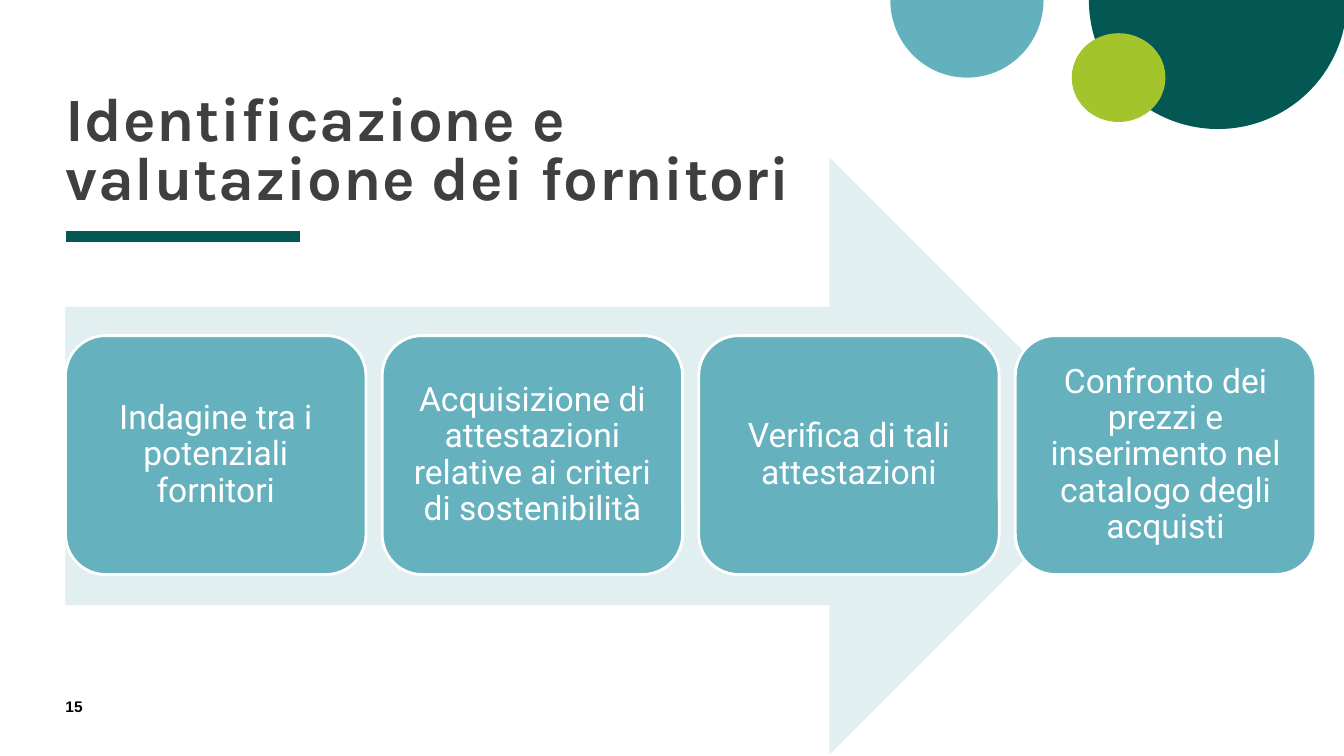
"""Build the slide on identifying and assessing suppliers."""
from dataclasses import dataclass

import lxml.etree
import pptx
import pptx.dml.color
import pptx.enum.shapes
import pptx.enum.text
import pptx.oxml.ns
import pptx.shapes.autoshape
import pptx.slide
import pptx.util

Inches = pptx.util.Inches
Pt = pptx.util.Pt
RGBColor = pptx.dml.color.RGBColor
ShapeType = pptx.enum.shapes.MSO_SHAPE
Align = pptx.enum.text.PP_ALIGN
Anchor = pptx.enum.text.MSO_ANCHOR

DARK_GREEN = RGBColor(0x03, 0x58, 0x54)
CIRCLE_BLUE = RGBColor(0x64, 0xB1, 0xBE)
LIME = RGBColor(0xA3, 0xC4, 0x2A)
STEP_BLUE = RGBColor(0x65, 0xB1, 0xBE)
ARROW_TINT = RGBColor(0xE1, 0xEF, 0xF1)
TITLE_GREY = RGBColor(0x3F, 0x3F, 0x3F)
BLACK = RGBColor(0, 0, 0)
WHITE = RGBColor(0xFF, 0xFF, 0xFF)

LEFT_MARGIN = 0.65
STEP_PITCH = 3.14
STEPS = (
    "Indagine tra i potenziali fornitori",
    "Acquisizione di attestazioni relative ai criteri di sostenibilità",
    "Verifica di tali attestazioni",
    "Confronto dei prezzi e inserimento nel catalogo degli acquisti",
)


@dataclass(frozen=True)
class Figure:
    kind: ShapeType
    left: float
    top: float
    width: float
    height: float
    fill: RGBColor
    adjustments: tuple[float, ...] = ()


DECORATION_BACK = Figure(ShapeType.PIE, 10.8, -1.28, 2.56, 2.56, DARK_GREEN, (0, 108))
DECORATION_FRONT = (
    Figure(ShapeType.PIE, 8.83, -0.77, 1.52, 1.54, CIRCLE_BLUE, (0, 108)),
    Figure(ShapeType.OVAL, 10.63, 0.33, 0.93, 0.88, LIME),
)
ARROW = Figure(ShapeType.RIGHT_ARROW, LEFT_MARGIN, 1.56, 10.54, 5.93, ARROW_TINT, (0.5, 0.5))


def add_figure(slide: pptx.slide.Slide, figure: Figure) -> pptx.shapes.autoshape.Shape:
    """Draw a filled preset shape without outline or shadow."""
    shape = slide.shapes.add_shape(
        figure.kind, Inches(figure.left), Inches(figure.top),
        Inches(figure.width), Inches(figure.height),
    )
    for index, value in enumerate(figure.adjustments):
        shape.adjustments[index] = value
    shape.shadow.inherit = False
    shape.fill.solid()
    shape.fill.fore_color.rgb = figure.fill
    shape.line.fill.background()
    return shape


def write_text(
    shape: pptx.shapes.autoshape.Shape, text: str, *, font: str, size: float,
    color: RGBColor, bold: bool = False, align: Align = Align.LEFT,
    anchor: Anchor = Anchor.TOP, line_spacing: float = 1.0,
    inset: float = 0, tracking: int = 0,
) -> None:
    """Fill a shape with one formatted paragraph."""
    frame = shape.text_frame
    frame.word_wrap = True
    frame.auto_size = pptx.enum.text.MSO_AUTO_SIZE.NONE
    frame.vertical_anchor = anchor
    frame.margin_left = frame.margin_right = Inches(inset)
    frame.margin_top = frame.margin_bottom = Inches(inset)
    paragraph = frame.paragraphs[0]
    paragraph.alignment = align
    paragraph.line_spacing = line_spacing
    run = paragraph.add_run()
    run.text = text
    run.font.name = font
    run.font.size = Pt(size)
    run.font.bold = bold
    run.font.color.rgb = color
    if tracking:
        run._r.get_or_add_rPr().set("spc", str(tracking))


def add_rule(slide: pptx.slide.Slide) -> None:
    """Draw the thick rule under the title."""
    rule = slide.shapes.add_connector(
        pptx.enum.shapes.MSO_CONNECTOR.STRAIGHT,
        Inches(LEFT_MARGIN), Inches(2.35), Inches(2.98), Inches(2.35),
    )
    rule.line.color.rgb = DARK_GREEN
    rule.line.width = Pt(8)
    lxml.etree.SubElement(rule._element.spPr, pptx.oxml.ns.qn("a:effectLst"))


def add_title(slide: pptx.slide.Slide) -> None:
    """Place and format the title placeholder."""
    title = slide.shapes.title
    title.left, title.top = Inches(LEFT_MARGIN), Inches(0.37)
    title.width, title.height = Inches(7.42), Inches(1.74)
    write_text(
        title, "Identificazione e valutazione dei fornitori", font="Karla", size=44,
        color=TITLE_GREY, bold=True, anchor=Anchor.BOTTOM, line_spacing=0.8, tracking=50,
    )


def add_step(slide: pptx.slide.Slide, index: int, text: str) -> None:
    """Draw one step of the process on the arrow."""
    left = LEFT_MARGIN + index * STEP_PITCH
    step = add_figure(
        slide,
        Figure(ShapeType.ROUNDED_RECTANGLE, left, 3.33, 2.98, 2.37, STEP_BLUE, (0.167,)),
    )
    step.line.color.rgb = WHITE
    step.line.width = Pt(2)
    write_text(
        step, text, font="Roboto", size=24, color=WHITE, align=Align.CENTER,
        anchor=Anchor.MIDDLE, line_spacing=0.9, inset=0.11,
    )


def main() -> None:
    """Assemble and save the presentation."""
    presentation = pptx.Presentation()
    presentation.slide_width = Inches(13.33)
    presentation.slide_height = Inches(7.5)
    slide = presentation.slides.add_slide(presentation.slide_layouts.get_by_name("Title Only"))
    add_figure(slide, DECORATION_BACK)
    add_rule(slide)
    for figure in DECORATION_FRONT:
        add_figure(slide, figure)
    add_title(slide)
    page_number = slide.shapes.add_textbox(
        Inches(LEFT_MARGIN), Inches(6.92), Inches(0.57), Inches(0.27)
    )
    write_text(page_number, "15", font="Arial", size=11, color=BLACK, bold=True)
    add_figure(slide, ARROW)
    for index, text in enumerate(STEPS):
        add_step(slide, index, text)
    presentation.save("out.pptx")


if __name__ == "__main__":
    main()
